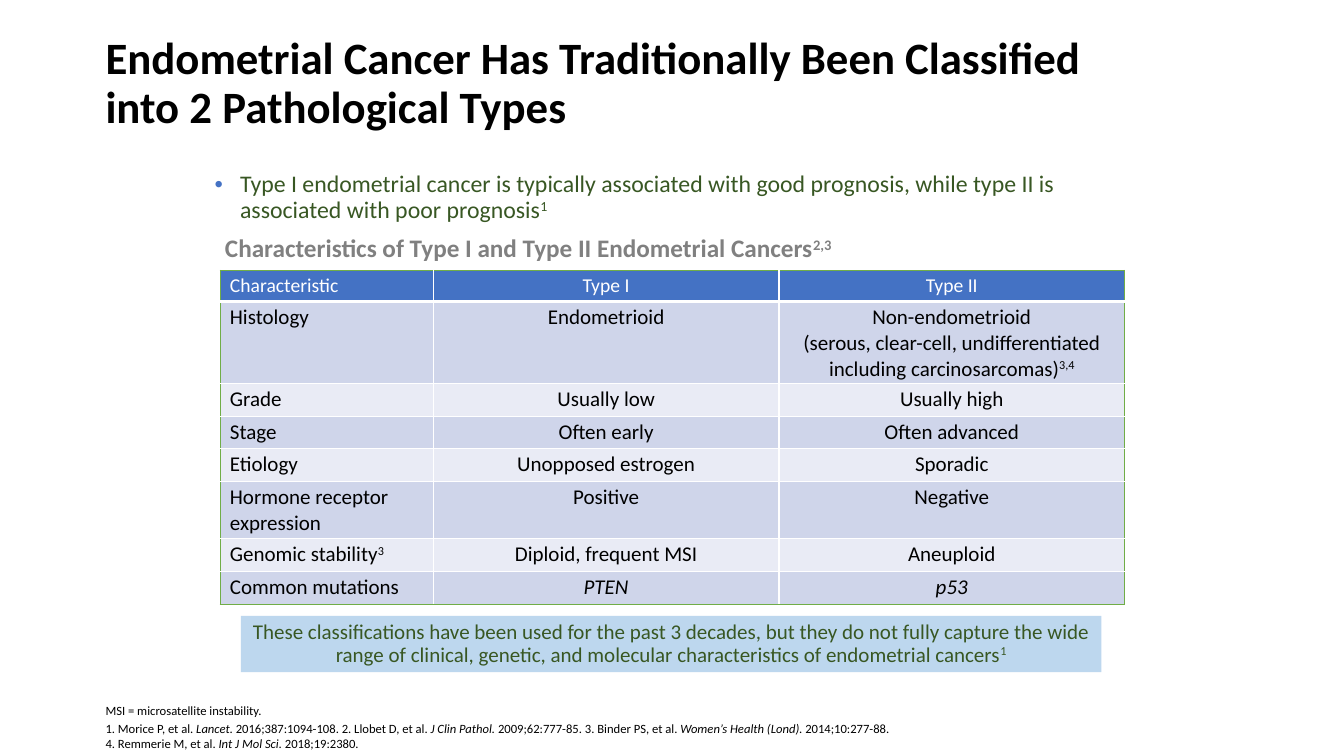
from lxml.etree import SubElement
from pptx import Presentation
from pptx.dml.color import RGBColor
from pptx.enum.shapes import MSO_SHAPE
from pptx.enum.text import MSO_ANCHOR, PP_ALIGN
from pptx.oxml.ns import qn
from pptx.util import Cm, Pt

COLORS = {
    "text": "000000", "white": "FFFFFF", "caption": "808080", "green": "385723",
    "header": "4472C4", "band_dark": "CFD5EA", "band_light": "E9EBF5",
    "edge": "70AD47", "callout": "BDD7EE",
}
FONT = "Calibri"
ROWS = [
    ("Characteristic", "Type I", "Type II"),
    ("Histology", "Endometrioid",
     "Non-endometrioid\n(serous, clear-cell, undifferentiated including carcinosarcomas)|^3,4"),
    ("Grade", "Usually low", "Usually high"),
    ("Stage", "Often early", "Often advanced"),
    ("Etiology", "Unopposed estrogen", "Sporadic"),
    ("Hormone receptor expression", "Positive", "Negative"),
    ("Genomic stability|^3", "Diploid, frequent MSI", "Aneuploid"),
    ("Common mutations", "|_PTEN", "|_p53"),
]
COL_WIDTHS = (5.38, 8.71, 8.71)
ROW_HEIGHTS = (0.79, 2.02, 0.82, 0.82, 0.82, 1.45, 0.82, 0.82)


def rgb(name):
    """Return the named colour."""
    return RGBColor.from_string(COLORS[name])


def write(p, marked, size, color, bold=False, align=PP_ALIGN.LEFT, spacing=None):
    """Fill a paragraph from pieces split by |, where ^ raises and _ slants a piece."""
    p.alignment = align
    p.line_spacing = spacing
    for piece in filter(None, marked.split("|")):
        mark = piece[0] if piece[0] in "^_" else ""
        for i, line in enumerate(piece[len(mark):].split("\n")):
            if i:
                p.add_line_break()
            r = p.add_run()
            r.text = line
            r.font.name, r.font.size, r.font.bold = FONT, Pt(size), bold
            r.font.italic = mark == "_"
            r.font.color.rgb = rgb(color)
            if mark == "^":
                r._r.get_or_add_rPr().set("baseline", "30000")
    for br in p._p.findall(qn("a:br")):
        SubElement(br, qn("a:rPr"), sz=str(size * 100))


def add_text(s, box, anchor=MSO_ANCHOR.TOP, inset=None):
    """Add a wrapping text box and return its text frame."""
    tf = s.shapes.add_textbox(*map(Cm, box)).text_frame
    tf.word_wrap = True
    tf.vertical_anchor = anchor
    if inset is not None:
        tf.margin_left = tf.margin_right = tf.margin_top = tf.margin_bottom = Cm(inset)
    return tf


def add_title(s, box):
    """Add the slide title."""
    tf = add_text(s, box, MSO_ANCHOR.MIDDLE)
    write(tf.paragraphs[0], "Endometrial Cancer Has Traditionally Been Classified "
          "into 2 Pathological Types", 32, "text", bold=True, spacing=0.9)


def add_bullet(s, box):
    """Add the bulleted statement on prognosis."""
    p = add_text(s, box).paragraphs[0]
    pPr = p._p.get_or_add_pPr()
    pPr.set("marL", str(Cm(0.64)))
    pPr.set("indent", str(-Cm(0.64)))
    SubElement(SubElement(pPr, qn("a:buClr")), qn("a:srgbClr"), val=COLORS["header"])
    SubElement(pPr, qn("a:buFont"), typeface="Arial")
    SubElement(pPr, qn("a:buChar"), char="•")
    write(p, "Type I endometrial cancer is typically associated with good prognosis, "
          "while type II is associated with poor prognosis|^1", 17, "green", spacing=0.9)


def add_caption(s, box):
    """Add the heading above the table."""
    tf = add_text(s, box, inset=0.13)
    write(tf.paragraphs[0], "Characteristics of Type I and Type II Endometrial Cancers|^2,3",
          18, "caption", bold=True, spacing=0.9)


def add_border(cell, side, color, width):
    """Draw one edge of a table cell."""
    ln = SubElement(cell._tc.get_or_add_tcPr(), qn(f"a:ln{side}"), w=str(Pt(width)))
    SubElement(SubElement(ln, qn("a:solidFill")), qn("a:srgbClr"), val=COLORS[color])


def add_comparison(s, left, top):
    """Add the banded table comparing the two types."""
    box = left, top, sum(COL_WIDTHS), sum(ROW_HEIGHTS)
    table = s.shapes.add_table(len(ROWS), len(COL_WIDTHS), *map(Cm, box)).table
    for column, width in zip(table.columns, COL_WIDTHS):
        column.width = Cm(width)
    for i, (labels, height) in enumerate(zip(ROWS, ROW_HEIGHTS)):
        table.rows[i].height = Cm(height)
        fill = "header" if i == 0 else "band_dark" if i % 2 else "band_light"
        for j, label in enumerate(labels):
            cell = table.cell(i, j)
            cell.margin_top = cell.margin_bottom = Cm(0.08)
            outer = {"L": j == 0, "R": j == len(labels) - 1,
                     "T": i == 0, "B": i == len(ROWS) - 1}
            for side, is_edge in outer.items():
                inner_width = 3 if i == 0 and side == "B" else 1
                add_border(cell, side, *(("edge", 0.5) if is_edge else ("white", inner_width)))
            cell.fill.solid()
            cell.fill.fore_color.rgb = rgb(fill)
            write(cell.text_frame.paragraphs[0], label, 15 if i else 14,
                  "text" if i else "white", align=PP_ALIGN.CENTER if j else PP_ALIGN.LEFT)


def add_callout(s, box):
    """Add the shaded conclusion below the table."""
    sp = s.shapes.add_shape(MSO_SHAPE.RECTANGLE, *map(Cm, box))
    sp.shadow.inherit = False
    sp.fill.solid()
    sp.fill.fore_color.rgb = rgb("callout")
    sp.line.fill.background()
    tf = sp.text_frame
    tf.word_wrap = True
    tf.vertical_anchor = MSO_ANCHOR.MIDDLE
    tf.margin_left = tf.margin_right = tf.margin_top = tf.margin_bottom = Cm(0.13)
    write(tf.paragraphs[0], "These classifications have been used for the past 3 decades, but "
          "they do not fully capture the wide range of clinical, genetic, and molecular "
          "characteristics of endometrial cancers|^1", 15, "green",
          align=PP_ALIGN.CENTER, spacing=0.9)


def add_references(s, box):
    """Add the abbreviation and the reference list."""
    tf = add_text(s, box, MSO_ANCHOR.BOTTOM)
    write(tf.paragraphs[0], "MSI = microsatellite instability.", 9, "text")
    p = tf.add_paragraph()
    p.space_before = Pt(2.2)
    write(p, "1. Morice P, et al. |_Lancet.| 2016;387:1094-108. 2. Llobet D, et al. "
          "|_J Clin Pathol. |2009;62:777-85. 3. Binder PS, et al. "
          "|_Women’s Health (Lond). |2014;10:277-88.\n4. Remmerie M, et al. "
          "|_Int J Mol Sci. |2018;19:2380.", 9, "text")


def main():
    """Build the slide and save it."""
    prs = Presentation()
    prs.slide_width, prs.slide_height = Cm(33.87), Cm(19.05)
    s = prs.slides.add_slide(prs.slide_layouts[6])
    add_title(s, (2.41, 0.86, 27.2, 2.54))
    add_references(s, (2.41, 17.27, 23.19, 1.78))
    add_caption(s, (5.54, 5.82, 21.26, 0.81))
    add_comparison(s, 5.54, 6.81)
    add_bullet(s, (5.16, 4.22, 23.47, 1.57))
    add_callout(s, (6.07, 15.52, 21.69, 1.42))
    prs.save("out.pptx")


if __name__ == "__main__":
    main()
